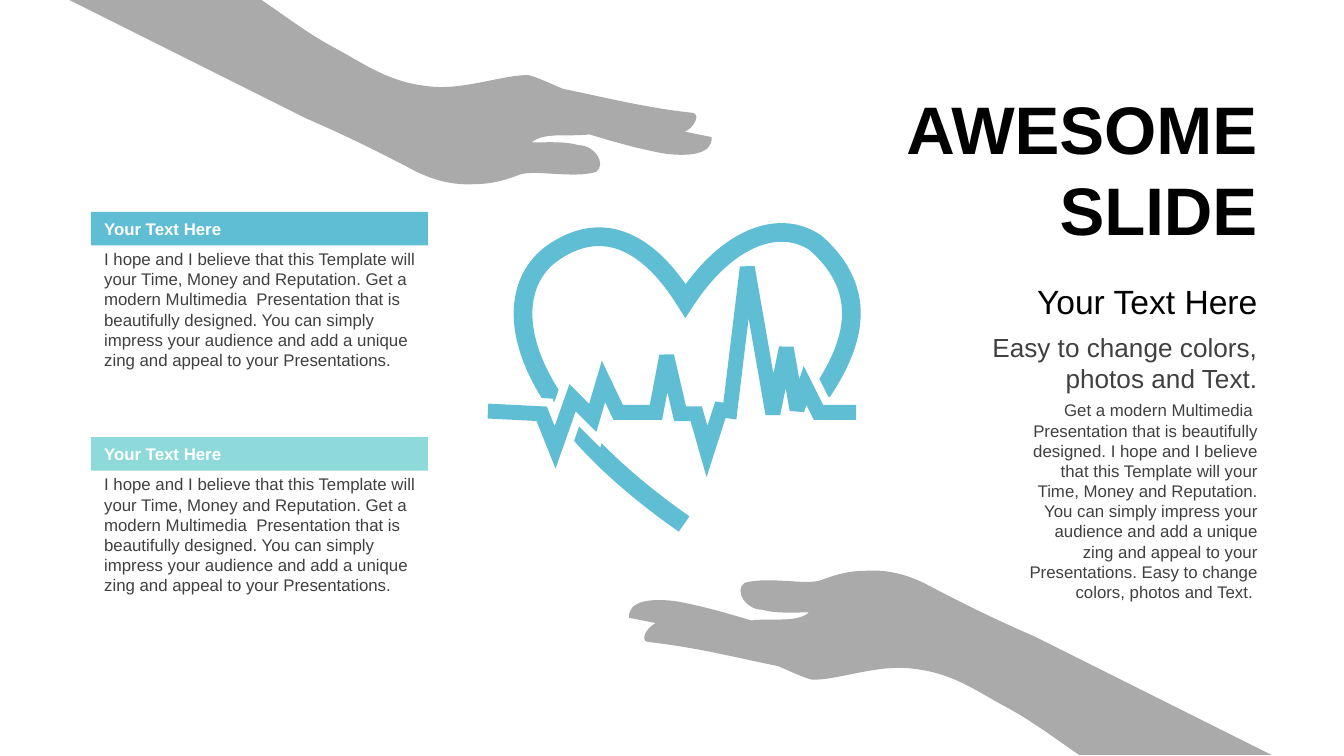
import lxml.etree
import pptx
import pptx.dml.color
import pptx.enum.shapes
import pptx.enum.text
import pptx.oxml.ns
import pptx.util

Pt = pptx.util.Pt
qn = pptx.oxml.ns.qn
ALIGN = pptx.enum.text.PP_ALIGN
ANCHOR = pptx.enum.text.MSO_ANCHOR

COLORS = {"blue": "60BED4", "mint": "8EDADA", "hand": "AAAAAA",
          "white": "FFFFFF", "black": "000000", "body": "404040"}

PROMISE = "I hope and I believe that this Template will your Time, Money and Reputation."
MODERN = "Get a modern Multimedia  Presentation that is beautifully designed."
SIMPLY = ("You can simply impress your audience and add a unique zing and "
          "appeal to your Presentations.")
EASY = "Easy to change colors, photos and Text."

# Outlines: the start point, then segments of one point (line) or three (curve).
# Each has its own grid, whose size is given beside it.
HAND_GRID = (478, 138)
HAND = [
    [(176, 1)], [(191, 0), (207, 3), (225, 13)], [(250, 26), (270, 36), (302, 50)],
    [(478, 138)], [(335, 138)],
    [(313, 123), (299, 112), (278, 101)], [(258, 90), (240, 77), (212, 74)],
    [(186, 70), (154, 83), (136, 82)], [(131, 81), (118, 75), (111, 72)],
    [(77, 65), (50, 58), (14, 54)], [(8, 53), (13, 43), (20, 40)], [(0, 36)],
    [(-1, 23), (17, 21), (37, 24)], [(57, 28), (71, 32), (91, 38)],
    [(106, 36), (125, 40), (134, 32)], [(123, 32), (109, 33), (99, 30)],
    [(87, 30), (78, 16), (86, 10)], [(104, 5), (132, 12), (143, 8)],
    [(151, 5), (162, 1), (176, 1)],
]
HEART_GRID = (244, 217)
HEART = [
    [(120, 217)], [(-10, 126), (-18, 47), (20, 17)], [(52, -7), (88, -2), (121, 51)],
    [(153, 2), (192, -10), (218, 8)], [(263, 48), (243, 92), (214, 131)],
]
PULSE_GRID = (274, 137)
PULSE = [[point] for point in [
    (0, 107), (40, 109), (50, 134), (63, 97), (78, 112), (86, 85), (97, 108),
    (125, 108), (133, 66), (143, 109), (155, 109), (163, 137), (173, 106),
    (180, 107), (193, 0), (212, 109), (222, 60), (230, 106), (236, 88),
    (246, 108), (274, 108)]]


def rgb(name):
    return pptx.dml.color.RGBColor.from_string(COLORS[name])


def add_outline(slide, segments, grid, left, top, width, close):
    """Freeform with true curves, its grid stretched evenly to the width."""
    ends = [segment[-1] for segment in segments]
    builder = slide.shapes.build_freeform(*ends[0], scale=Pt(1))
    builder.add_line_segments(ends[1:], close=close)
    sp = builder.convert_to_shape()
    sp.left, sp.top = Pt(left), Pt(top)
    sp.width, sp.height = Pt(width), Pt(width * grid[1] / grid[0])
    sp.shadow.inherit = False

    outline = next(sp.element.iter(qn("a:path")))
    del outline[:]
    outline.set("w", str(grid[0]))
    outline.set("h", str(grid[1]))
    for i, segment in enumerate(segments):
        tag = "a:moveTo" if i == 0 else "a:lnTo" if len(segment) == 1 else "a:cubicBezTo"
        step = lxml.etree.SubElement(outline, qn(tag))
        for x, y in segment:
            lxml.etree.SubElement(step, qn("a:pt"), x=str(x), y=str(y))
    if close:
        lxml.etree.SubElement(outline, qn("a:close"))
    return sp


def add_hand(slide, left, top, width, rotation=0):
    sp = add_outline(slide, HAND, HAND_GRID, left, top, width, True)
    sp.fill.solid()
    sp.fill.fore_color.rgb = rgb("hand")
    sp.line.fill.background()
    sp.rotation = rotation


def add_heartbeat(slide, left, top, width):
    """Heart outline, cut by a white band that carries the pulse line."""
    unit = width / PULSE_GRID[0]
    heart = (HEART, HEART_GRID, left + 26 * unit, top, HEART_GRID[0] * unit)
    pulse = (PULSE, PULSE_GRID, left, top + 26 * unit, width)
    for part, color, weight in ((heart, "blue", 10), (pulse, "white", 16.75),
                                (pulse, "blue", 8)):
        sp = add_outline(slide, *part, False)
        sp.fill.background()
        sp.line.color.rgb = rgb(color)
        sp.line.width = Pt(weight)
        ln = next(sp.element.iter(qn("a:ln")))
        lxml.etree.SubElement(ln, qn("a:miter"), lim="800000")


def set_text(sp, lines, size, color, bold=False, align=ALIGN.LEFT,
             anchor=ANCHOR.TOP, inset=(7.2, 3.6)):
    tf = sp.text_frame
    tf.word_wrap = True
    tf.vertical_anchor = anchor
    tf.margin_left = tf.margin_right = Pt(inset[0])
    tf.margin_top = tf.margin_bottom = Pt(inset[1])
    tf.text = "\n".join(lines)
    for p in tf.paragraphs:
        p.alignment = align
        p.line_spacing = Pt(size * 1.2)
        p.font.name = "Arial"
        p.font.size = Pt(size)
        p.font.bold = bold
        p.font.color.rgb = rgb(color)


def add_card(slide, left, top, width, color):
    body = slide.shapes.add_textbox(Pt(left), Pt(top + 16.3), Pt(width + 1.5), Pt(72.5))
    set_text(body, [f"{PROMISE} {MODERN} {SIMPLY}"], 9, "body")
    bar = slide.shapes.add_shape(pptx.enum.shapes.MSO_SHAPE.RECTANGLE,
                                 Pt(left), Pt(top), Pt(width), Pt(18))
    bar.shadow.inherit = False
    bar.fill.solid()
    bar.fill.fore_color.rgb = rgb(color)
    bar.line.fill.background()
    set_text(bar, ["Your Text Here"], 9, "white", bold=True)


def add_title_column(slide, right, top):
    """Right-aligned texts; each row is offset, width, height and its style."""
    rows = [
        (0, 211, 93, ["AWESOME", "SLIDE"], 36, "black", True, ANCHOR.MIDDLE),
        (104.3, 178, 27, ["Your Text Here"], 18, "black", False, ANCHOR.MIDDLE),
        (131, 178, 39.5, [EASY], 14, "body", False, ANCHOR.MIDDLE),
        (168, 135.5, 114.5, [f"{MODERN} {PROMISE} {SIMPLY} {EASY} "], 9, "body",
         False, ANCHOR.TOP),
    ]
    for offset, width, height, lines, size, color, bold, anchor in rows:
        sp = slide.shapes.add_textbox(Pt(right - width), Pt(top + offset),
                                      Pt(width), Pt(height))
        set_text(sp, lines, size, color, bold, ALIGN.RIGHT, anchor, (5, 2.9))


def main():
    prs = pptx.Presentation()
    prs.slide_width, prs.slide_height = Pt(720), Pt(405)
    slide = prs.slides.add_slide(prs.slide_layouts[6])
    add_heartbeat(slide, 261.4, 124.5, 197.3)
    for top, color in ((113.5, "blue"), (234.2, "mint")):
        add_card(slide, 48.7, top, 180.5, color)
    add_hand(slide, 337, 305.1, 344)
    add_hand(slide, 37.2, 0, 344, rotation=180)
    add_title_column(slide, 678.6, 43.5)
    prs.save("out.pptx")


if __name__ == "__main__":
    main()
